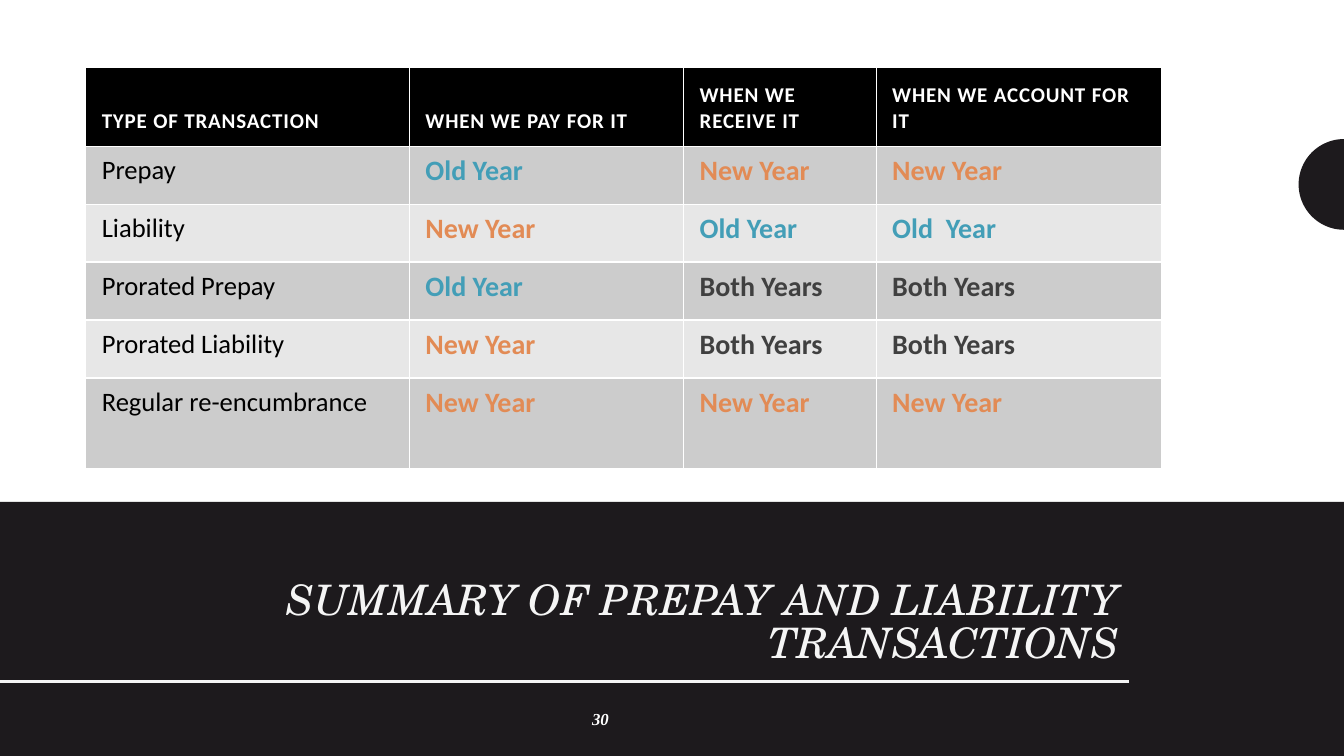
import math

from lxml import etree
from pptx import Presentation
from pptx.dml.color import RGBColor
from pptx.enum.shapes import MSO_CONNECTOR, MSO_SHAPE
from pptx.enum.text import MSO_ANCHOR, PP_ALIGN
from pptx.oxml.ns import qn
from pptx.util import Inches, Pt

STRAIGHT, RECTANGLE = MSO_CONNECTOR.STRAIGHT, MSO_SHAPE.RECTANGLE
TOP, MIDDLE, BOTTOM = MSO_ANCHOR.TOP, MSO_ANCHOR.MIDDLE, MSO_ANCHOR.BOTTOM
LEFT, CENTER, RIGHT = PP_ALIGN.LEFT, PP_ALIGN.CENTER, PP_ALIGN.RIGHT

TITLE = "SUMMARY OF PREPAY AND LIABILITY TRANSACTIONS"
PAGE_NUMBER = "30"
HEADERS = ["TYPE OF TRANSACTION", "WHEN WE PAY FOR IT",
           "WHEN WE RECEIVE IT", "WHEN WE ACCOUNT FOR IT"]
TRANSACTIONS = [
    ("Prepay", "Old Year", "New Year", "New Year"),
    ("Liability", "New Year", "Old Year", "Old  Year"),
    ("Prorated Prepay", "Old Year", "Both Years", "Both Years"),
    ("Prorated Liability", "New Year", "Both Years", "Both Years"),
    ("Regular re-encumbrance", "New Year", "New Year", "New Year"),
]
COLORS = {
    "dark": "1D1A1D", "light": "F5F5F5", "white": "FFFFFF", "black": "000000",
    "band_odd": "CCCCCC", "band_even": "E7E7E7",
    "Old": "439EB7", "New": "E28B55", "Both": "404040",
}
SLIDE_WIDTH, SLIDE_HEIGHT = 13.33, 7.5
PANEL_TOP = 4.98
TABLE_LEFT, TABLE_TOP = 0.85, 0.67
COLUMN_WIDTHS = [3.21, 2.72, 1.91, 2.83]
ROW_HEIGHTS = [0.78] + [0.575] * 4 + [0.9]


def rgb(name):
    return RGBColor.from_string(COLORS[name])


def write(frame, text, font="Calibri", size=20, color="black", bold=False,
          italic=False, align=LEFT, tracking=0, line_spacing=None, after=0):
    paragraph = frame.paragraphs[0]
    paragraph.alignment = align
    paragraph.space_after = Pt(after)
    if line_spacing:
        paragraph.line_spacing = line_spacing
    run = paragraph.add_run()
    run.text = text
    run.font.name, run.font.size = font, Pt(size)
    run.font.bold, run.font.italic = bold, italic
    run.font.color.rgb = rgb(color)
    if tracking:
        run.font._element.set("spc", str(round(tracking * 100)))


def add_text(slide, box, text, anchor, **text_format):
    frame = slide.shapes.add_textbox(*map(Inches, box)).text_frame
    frame.word_wrap = True
    frame.vertical_anchor = anchor
    write(frame, text, **text_format)


def paint(shape, color):
    shape.shadow.inherit = False
    shape.fill.solid()
    shape.fill.fore_color.rgb = rgb(color)
    shape.line.fill.background()


def add_half_disc(slide, center_y, radius, steps=48):
    """Draw the dark half disc that bulges in from the right slide edge."""
    angles = [math.pi * step / steps for step in range(steps + 1)]
    points = [(Inches(SLIDE_WIDTH - radius * math.sin(angle)),
               Inches(center_y - radius * math.cos(angle))) for angle in angles]
    builder = slide.shapes.build_freeform(*points[0])
    builder.add_line_segments(points[1:], close=True)
    paint(builder.convert_to_shape(), "dark")


def add_rule(slide, y, right):
    rule = slide.shapes.add_connector(
        STRAIGHT, Inches(right), Inches(y), Inches(0), Inches(y))
    rule.line.color.rgb = rgb("light")
    rule.line.width = Pt(2)
    etree.SubElement(rule._element.spPr, qn("a:effectLst"))


def style_cell(cell, fill, anchor, top_margin):
    """Set margins, white borders and fill; borders must precede the fill."""
    cell.margin_left = cell.margin_right = Inches(0.16)
    cell.margin_top, cell.margin_bottom = Inches(top_margin), Inches(0.12)
    cell.vertical_anchor = anchor
    properties = cell._tc.get_or_add_tcPr()
    for side in ("lnL", "lnR", "lnT", "lnB"):
        border = etree.SubElement(properties, qn(f"a:{side}"), w=str(Pt(1)))
        solid = etree.SubElement(border, qn("a:solidFill"))
        etree.SubElement(solid, qn("a:srgbClr"), val=COLORS["white"])
    cell.fill.solid()
    cell.fill.fore_color.rgb = rgb(fill)


def add_transaction_table(slide):
    rows = [HEADERS] + TRANSACTIONS
    table = slide.shapes.add_table(
        len(rows), len(HEADERS), Inches(TABLE_LEFT), Inches(TABLE_TOP),
        Inches(sum(COLUMN_WIDTHS)), Inches(sum(ROW_HEIGHTS))).table
    for column, width in zip(table.columns, COLUMN_WIDTHS):
        column.width = Inches(width)
    for row, height in zip(table.rows, ROW_HEIGHTS):
        row.height = Inches(height)
    for row_index, row in enumerate(rows):
        band = "band_odd" if row_index % 2 else "band_even"
        for column_index, text in enumerate(row):
            cell = table.cell(row_index, column_index)
            if row_index == 0:
                style_cell(cell, "black", BOTTOM, 0.12)
                write(cell.text_frame, text, size=15, color="white",
                      bold=True, tracking=0.6)
                continue
            style_cell(cell, band, TOP, 0.08)
            if column_index == 0:
                write(cell.text_frame, text, size=19)
            else:
                write(cell.text_frame, text, color=text.split()[0], bold=True)


def main():
    presentation = Presentation()
    presentation.slide_width = Inches(SLIDE_WIDTH)
    presentation.slide_height = Inches(SLIDE_HEIGHT)
    slide = presentation.slides.add_slide(presentation.slide_layouts[6])

    add_half_disc(slide, center_y=1.83, radius=0.45)
    panel = slide.shapes.add_shape(
        RECTANGLE, Inches(0), Inches(PANEL_TOP),
        Inches(SLIDE_WIDTH), Inches(SLIDE_HEIGHT - PANEL_TOP))
    paint(panel, "dark")
    add_text(slide, (0.7, 5.69, 10.5, 0.98), TITLE, BOTTOM,
             font="TeX Gyre Schola", size=30, color="light", italic=True,
             align=RIGHT, line_spacing=0.85, after=6)
    add_rule(slide, y=6.76, right=11.2)
    add_transaction_table(slide)
    add_text(slide, (3.87, 6.93, 4.17, 0.4), PAGE_NUMBER, MIDDLE,
             font="Times New Roman", size=12, color="white", bold=True,
             italic=True, align=CENTER)
    presentation.save("out.pptx")


if __name__ == "__main__":
    main()
